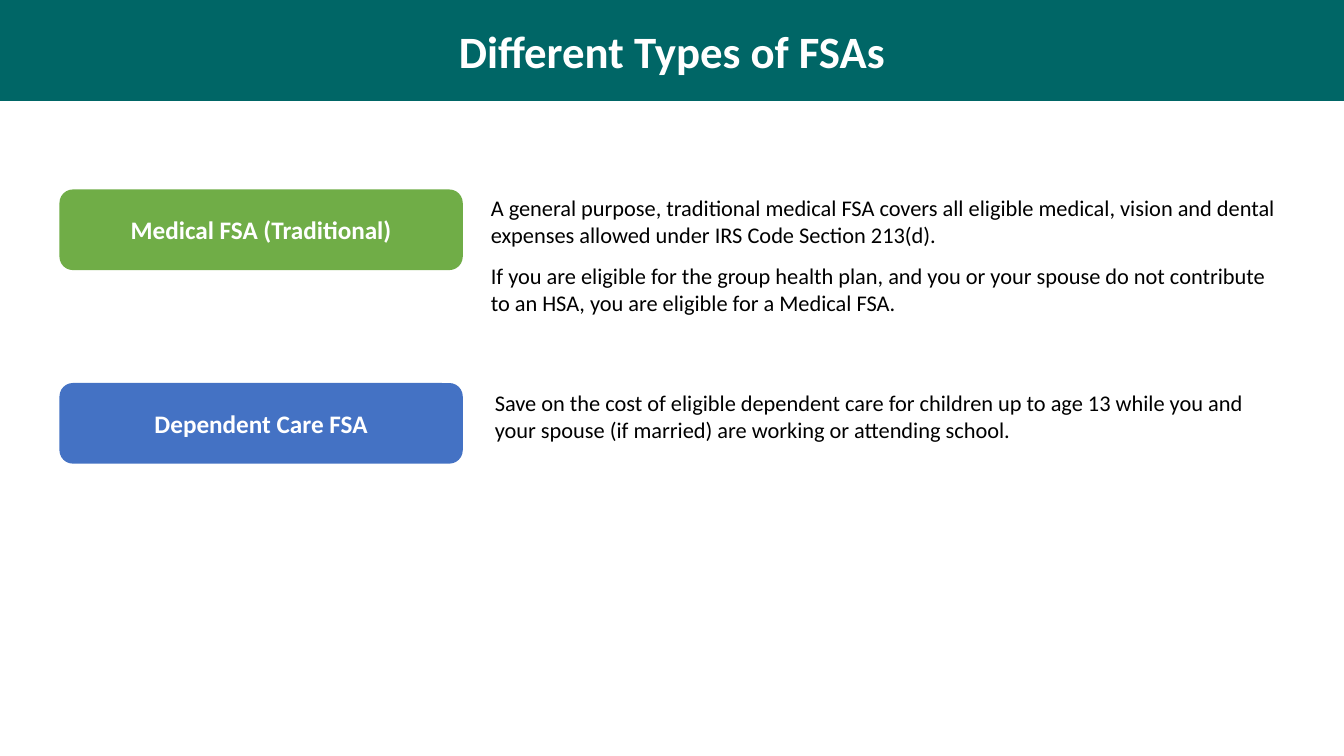
from dataclasses import dataclass

from pptx import Presentation
from pptx.dml.color import RGBColor
from pptx.enum.shapes import MSO_SHAPE
from pptx.enum.text import MSO_ANCHOR, MSO_AUTO_SIZE, PP_ALIGN
from pptx.util import Inches, Pt

ROUNDED = MSO_SHAPE.ROUNDED_RECTANGLE
MIDDLE = MSO_ANCHOR.MIDDLE
CENTER = PP_ALIGN.CENTER
NO_AUTOFIT = MSO_AUTO_SIZE.NONE
GROW_TO_FIT = MSO_AUTO_SIZE.SHAPE_TO_FIT_TEXT
TITLE_ONLY = 5


@dataclass(frozen=True)
class Theme:
    """Colours, typeface and type sizes of the slide."""
    font: str = "Calibri"
    banner: RGBColor = RGBColor(0x00, 0x66, 0x66)
    medical: RGBColor = RGBColor(0x70, 0xAD, 0x47)
    dependent: RGBColor = RGBColor(0x44, 0x72, 0xC4)
    light: RGBColor = RGBColor(0xFF, 0xFF, 0xFF)
    dark: RGBColor = RGBColor(0x00, 0x00, 0x00)
    title_size: Pt = Pt(32)
    label_size: Pt = Pt(18)
    body_size: Pt = Pt(16)
    paragraph_gap: Pt = Pt(9.8)


THEME = Theme()


def style(paragraph, size, color, bold=False):
    """Set the font of a whole paragraph."""
    font = paragraph.font
    font.name, font.size, font.bold = THEME.font, size, bold
    font.color.rgb = color


def fill_with_label(shape, wording, fill, size):
    """Give a shape a plain fill and a centred bold label."""
    shape.fill.solid()
    shape.fill.fore_color.rgb = fill
    shape.line.fill.background()
    frame = shape.text_frame
    frame.text = wording
    frame.word_wrap = True
    frame.auto_size = NO_AUTOFIT
    frame.vertical_anchor = MIDDLE
    label = frame.paragraphs[0]
    label.alignment = CENTER
    style(label, size, THEME.light, bold=True)


def add_banner(slide, wording, width):
    """Turn the title placeholder into a full-width banner."""
    banner = slide.shapes.title
    banner.left, banner.top = Inches(0), Inches(0)
    banner.width, banner.height = width, Inches(1)
    fill_with_label(banner, wording, THEME.banner, THEME.title_size)


def add_plan_label(slide, wording, top, fill):
    """Add the rounded label that names a plan."""
    plan = slide.shapes.add_shape(
        ROUNDED, Inches(0.59), Inches(top), Inches(4), Inches(0.8))
    plan.shadow.inherit = False
    fill_with_label(plan, wording, fill, THEME.label_size)


def add_description(slide, wordings, left, top, height):
    """Add the explanatory paragraphs beside a plan label."""
    description = slide.shapes.add_textbox(
        Inches(left), Inches(top), Inches(8), Inches(height))
    frame = description.text_frame
    frame.word_wrap = True
    frame.auto_size = GROW_TO_FIT
    frame.text = "\n".join(wordings)
    for paragraph in frame.paragraphs:
        style(paragraph, THEME.body_size, THEME.dark)
    for paragraph in frame.paragraphs[1:]:
        paragraph.space_before = THEME.paragraph_gap


def main():
    """Build and save the slide."""
    deck = Presentation()
    deck.slide_width, deck.slide_height = Inches(13.33), Inches(7.5)
    slide = deck.slides.add_slide(deck.slide_layouts[TITLE_ONLY])
    add_banner(slide, "Different Types of FSAs", deck.slide_width)

    add_plan_label(slide, "Medical FSA (Traditional)", 1.88, THEME.medical)
    add_plan_label(slide, "Dependent Care FSA", 3.8, THEME.dependent)

    add_description(slide, [
        "A general purpose, traditional medical FSA covers all eligible "
        "medical, vision and dental expenses allowed under IRS Code "
        "Section 213(d).",
        "If you are eligible for the group health plan, and you or your "
        "spouse do not contribute to an HSA, you are eligible for a "
        "Medical FSA.",
    ], 4.77, 1.88, 1.31)
    add_description(slide, [
        "Save on the cost of eligible dependent care for children up to "
        "age 13 while you and your spouse (if married) are working or "
        "attending school.",
    ], 4.81, 3.81, 0.64)

    deck.save("out.pptx")


if __name__ == "__main__":
    main()
